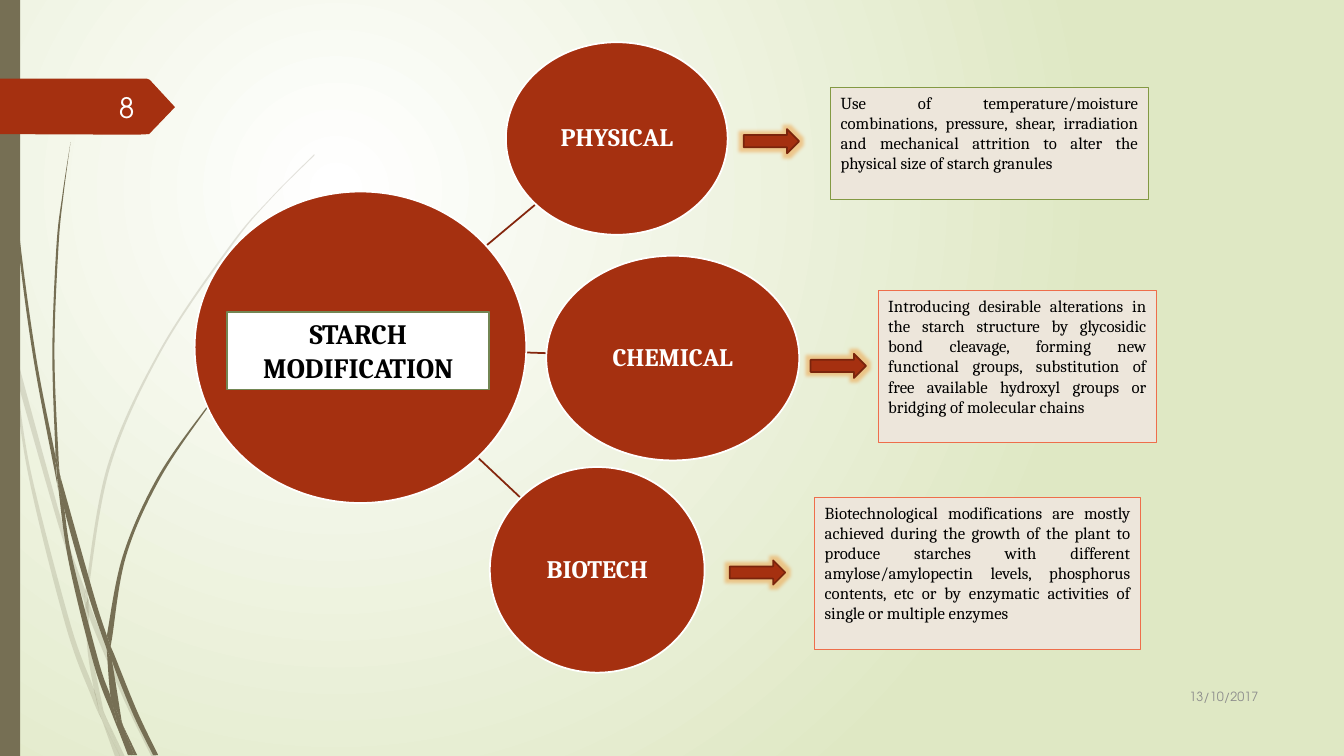
from dataclasses import dataclass

from lxml.etree import SubElement
from pptx import Presentation
from pptx.dml.color import RGBColor
from pptx.enum.shapes import MSO_CONNECTOR, MSO_SHAPE
from pptx.enum.text import MSO_ANCHOR, PP_ALIGN
from pptx.oxml.ns import qn
from pptx.util import Pt


@dataclass(frozen=True)
class Theme:
    paper: str = "FFFFFF"
    paper_edge: str = "DFE8C4"
    grass: str = "766F54"
    rust: str = "A53010"
    rust_line: str = "84260D"
    arrow_line: str = "7A240C"
    glow: str = "F0932B"
    note: str = "EDE6DB"
    green_line: str = "839943"
    coral_line: str = "EE6E4B"
    label_line: str = "728653"
    ink: str = "000000"
    date: str = "8C8C8C"
    serif: str = "Cambria"
    sans: str = "TeX Gyre Adventor"
    hub_size: int = 20
    branch_size: int = 18
    note_size: int = 12
    date_size: int = 9


THEME = Theme()
SLIDE_BOX = (0, 0, 960, 540)
DIAGRAM_BOX = (139, 30, 687, 451)

# Grass pieces: the two smooth sides of each outline
FAINT_GRASS = [
    ([(8, 252), (6.5, 232), (0, 203)], [(0, 215), (7, 248)]),
    ([(12, 271), (42, 376), (60.5, 431)], [(61, 422), (44.6, 374), (10, 248)]),
    ([(63, 429), (63, 439), (88.6, 500), (108, 540)], [(111.6, 540), (91.4, 498), (66, 437)]),
    ([(75.6, 512), (85.7, 540)], [(89, 540)]),
    ([(8, 252), (20, 338), (47, 447), (66, 499), (72.7, 514)],
     [(71, 509), (67, 492), (50.4, 446), (22.3, 338), (12, 271)]),
    ([(60.5, 431), (62.6, 465), (67, 492), (69, 498), (75.6, 512)],
     [(74, 508), (65.5, 465), (63.4, 439), (63.4, 438)]),
    ([(61.2, 422), (61.2, 420), (77, 332), (113.8, 250.6), (164, 175.7), (193, 141.8), (224.6, 110)],
     [(224.6, 111), (193, 142.6), (165, 176.4), (115, 251.3), (79, 332.6), (63.4, 420), (63.4, 429)]),
    ([(72.7, 514), (82, 540)], [(85.7, 540)]),
    ([(63.4, 438), (63.4, 439), (63.4, 429)], [(61.2, 422), (60.5, 431)]),
    ([(67, 492), (71, 509), (72.7, 514), (85.7, 540)], [(75.6, 512), (69, 498)]),
]
DARK_GRASS = [
    ([(2.2, 0), (2.9, 34.6), (5, 79), (12.2, 168), (23.8, 255.6), (40.3, 343), (41, 346)],
     [(39.6, 329), (39.6, 326), (25.9, 255.6), (13.7, 167), (5.8, 78.5), (3.6, 34.6), (2.9, 0)]),
    ([(43, 340), (46, 364), (63.4, 426), (76.3, 464)], [(76.3, 454), (67, 425), (43, 340)]),
    ([(79, 461.5), (80, 472), (95, 510), (109.4, 539.3)], [(113, 539.3), (98, 508), (81.4, 467)]),
    ([(41, 343), (49, 401), (67, 474.5), (80, 510), (84, 520)],
     [(83.5, 516), (79, 497.5), (70.6, 473), (51.8, 400), (46, 364)]),
    ([(43, 340), (41.8, 326), (38.9, 251), (41.8, 176), (45.4, 139), (50.4, 101.5)],
     [(50.4, 101.5), (44.6, 139), (40.3, 176), (37.4, 251), (39.6, 323)]),
    ([(87.8, 518), (95.8, 539.3)], [(98, 539.3)]),
    ([(41, 343), (46, 364), (43, 340)], [(39.6, 323), (39.6, 326)]),
    ([(76.3, 454), (87.8, 396.7), (112.3, 341.3), (147, 291.6), (166.3, 268.6), (187.2, 247.7)],
     [(188, 247.7), (166.3, 269.3), (147.6, 292.3), (113.8, 342.7), (90, 397.4), (80, 456), (79, 461.5)]),
    ([(84, 520), (91.4, 539.3)], [(94.3, 539.3)]),
    ([(76.3, 464), (79, 497.5), (83.5, 508), (87.8, 518)], [(87, 515.5), (80, 472), (78.5, 469)]),
    ([(76.3, 464), (78.5, 469), (80, 472)], [(79, 461.5), (76.3, 454)]),
    ([(79, 497.5), (83.5, 516), (84, 520), (93.6, 539.3)], [(95.8, 539.3), (87.8, 518), (83.5, 508)]),
]
PAGE_TAG = [(125, 76.5), (106.5, 95.8), (98, 96.2), (0, 95.8), (0, 56.2), (105, 56.2), (107, 57)]

# Branches: positions are relative to the diagram box
BRANCHES = [
    dict(name="PHYSICAL", circle=(222.4, 0.2, 158.4, 137.5), arrow=(392.2, 62.2),
         note=(454.3, 32.6, 226.8, 79.9), link=(208.9, 145, 243.1, 116.4), border=THEME.green_line,
         text="Use of temperature/moisture combinations, pressure, shear, irradiation "
              "and mechanical attrition to alter the physical size of starch granules"),
    dict(name="CHEMICAL", circle=(251.2, 152.7, 180.7, 146.2), arrow=(440, 222.7),
         note=(488.4, 177.6, 198.7, 108.7), link=(237, 221.8, 251.5, 222.3), border=THEME.coral_line,
         text="Introducing desirable alterations in the starch structure by glycosidic "
              "bond cleavage, forming new functional groups, substitution of free "
              "available hydroxyl groups or bridging of molecular chains"),
    dict(name="BIOTECH", circle=(210.9, 303.6, 153.4, 146.9), arrow=(382.3, 370.3),
         note=(443, 325.2, 232.6, 108.7), link=(203, 297.5, 232.5, 325.2), border=THEME.coral_line,
         text="Biotechnological modifications are mostly achieved during the growth of the plant "
              "to produce starches with different amylose/amylopectin levels, phosphorus contents, "
              "etc or by enzymatic activities of single or multiple enzymes"),
]


def color(value):
    return RGBColor.from_string(value)


def inside(box, part):
    """Move a part, given relative to a box, to slide coordinates."""
    return (box[0] + part[0], box[1] + part[1], *part[2:])


def paint(shape, fill, line=None, width=1.25):
    shape.shadow.inherit = False
    shape.fill.solid()
    shape.fill.fore_color.rgb = color(fill)
    if line:
        shape.line.color.rgb = color(line)
        shape.line.width = Pt(width)
    else:
        shape.line.fill.background()


def add_block(slide, kind, box, fill, line=None, width=1.25):
    shape = slide.shapes.add_shape(kind, *map(Pt, box))
    paint(shape, fill, line, width)
    return shape


def write(shape, text, size, ink, align=PP_ALIGN.CENTER, font=THEME.serif, bold=False, **settings):
    for name, value in {"word_wrap": True, "vertical_anchor": MSO_ANCHOR.MIDDLE, **settings}.items():
        setattr(shape.text_frame, name, value)
    paragraph = shape.text_frame.paragraphs[0]
    paragraph.alignment = align
    run = paragraph.add_run()
    run.text = text
    for name, value in {"name": font, "size": Pt(size), "bold": bold}.items():
        setattr(run.font, name, value)
    run.font.color.rgb = color(ink)


def add_outline(slide, box, points, fill):
    corners = [tuple(map(Pt, inside(box, point))) for point in points]
    builder = slide.shapes.build_freeform(*corners[0])
    builder.add_line_segments(corners[1:], close=True)
    shape = builder.convert_to_shape()
    paint(shape, fill)
    return shape


def bend(side):
    """Bezier control points of a smooth curve through the side's points."""
    padded = [side[0], *side, side[-1]]
    for a, b, c, d in zip(padded, padded[1:], padded[2:], padded[3:]):
        yield tuple(q + (r - p) / 6 for p, q, r in zip(a, b, c))
        yield tuple(r - (s - q) / 6 for q, r, s in zip(b, c, d))
        yield c


def add_grass(slide, box, sides, opacity):
    first, second = sides
    points = [first[0], *bend(first), *bend([first[-1], second[0]]), *bend(second)]
    grass = add_outline(slide, box, points, THEME.grass)
    # Turn each three straight segments into one curve
    segments = list(grass.element.iter(qn("a:lnTo")))
    for start in range(0, len(segments), 3):
        contour = segments[start].getparent()
        curve = SubElement(contour, qn("a:cubicBezTo"))
        contour.insert(contour.index(segments[start]), curve)
        for segment in segments[start:start + 3]:
            curve.append(segment[0])
            contour.remove(segment)
    if opacity < 100:
        tint = grass.element.spPr.find(qn("a:solidFill"))[0]
        SubElement(tint, qn("a:alpha"), val=str(opacity * 1000))


def add_backdrop(slide, box):
    # Radial background
    fill = slide.background.fill
    fill.gradient()
    for stop, shade, position in zip(fill.gradient_stops, (THEME.paper, THEME.paper_edge), (0, 1)):
        stop.color.rgb = color(shade)
        stop.position = position
    gradient = slide.element.find(".//" + qn("a:gradFill"))
    gradient.remove(gradient.find(qn("a:lin")))
    radial = SubElement(gradient, qn("a:path"), path="circle")
    SubElement(radial, qn("a:fillToRect"), l="50000", t="50000", r="100000", b="100000")
    # Grass, side bar and page tag
    for pieces, opacity in ((FAINT_GRASS, 20), (DARK_GRASS, 100)):
        for sides in pieces:
            add_grass(slide, box, sides, opacity)
    add_block(slide, MSO_SHAPE.RECTANGLE, inside(box, (0, 0, 14.4, box[3])), THEME.grass)
    add_outline(slide, box, PAGE_TAG, THEME.rust)


def add_branch(slide, box, branch):
    note = add_block(slide, MSO_SHAPE.RECTANGLE, inside(box, branch["note"]), THEME.note, branch["border"], 0.75)
    write(note, branch["text"], THEME.note_size, THEME.ink, PP_ALIGN.JUSTIFY, vertical_anchor=MSO_ANCHOR.TOP)
    # Circle, with its name in the inscribed rectangle
    left, top, width, height = inside(box, branch["circle"])
    add_block(slide, MSO_SHAPE.OVAL, (left, top, width, height), THEME.rust, THEME.paper)
    inner = (left + 0.146 * width, top + 0.146 * height, 0.708 * width, 0.708 * height)
    name = slide.shapes.add_textbox(*map(Pt, inner))
    margins = dict.fromkeys(("margin_left", "margin_right", "margin_top", "margin_bottom"), Pt(1))
    write(name, branch["name"], THEME.branch_size, THEME.paper, bold=True, **margins)
    name.text_frame.paragraphs[0].line_spacing = 0.9
    # Glowing arrow
    arrow = add_block(slide, MSO_SHAPE.RIGHT_ARROW, inside(box, (*branch["arrow"], 39.6, 17.3)),
                      THEME.rust, THEME.arrow_line)
    glow = SubElement(arrow.element.spPr.find(qn("a:effectLst")), qn("a:glow"), rad=str(Pt(5)))
    SubElement(SubElement(glow, qn("a:srgbClr"), val=THEME.glow), qn("a:alpha"), val="45000")


def add_diagram(slide, box):
    # Links from hub to branches
    for branch in BRANCHES:
        ends = inside(box, branch["link"][:2]) + inside(box, branch["link"][2:])
        link = slide.shapes.add_connector(MSO_CONNECTOR.STRAIGHT, *map(Pt, ends))
        link.line.color.rgb = color(THEME.rust_line)
        link.line.width = Pt(1.25)
        SubElement(link.element.spPr, qn("a:effectLst"))
    # Hub and its label
    add_block(slide, MSO_SHAPE.OVAL, inside(box, (0, 106.8, 236.9, 222.5)), THEME.rust, THEME.paper)
    label = add_block(slide, MSO_SHAPE.RECTANGLE, inside(box, (23.4, 192.6, 187.2, 55.7)),
                      THEME.paper, THEME.label_line)
    write(label, "STARCH MODIFICATION", THEME.hub_size, THEME.ink, bold=True, vertical_anchor=MSO_ANCHOR.TOP)
    for branch in BRANCHES:
        add_branch(slide, box, branch)


def add_footer(slide, box):
    for text, part, size, ink in (("13/10/2017", (815.8, 482.4, 90, 29.5), THEME.date_size, THEME.date),
                                  ("8", (41.8, 61.9, 61.2, 28.8), THEME.hub_size, THEME.paper)):
        field = slide.shapes.add_textbox(*map(Pt, inside(box, part)))
        write(field, text, size, ink, PP_ALIGN.RIGHT, THEME.sans)


def main():
    presentation = Presentation()
    presentation.slide_width, presentation.slide_height = map(Pt, SLIDE_BOX[2:])
    slide = presentation.slides.add_slide(presentation.slide_layouts[6])
    add_backdrop(slide, SLIDE_BOX)
    add_diagram(slide, DIAGRAM_BOX)
    add_footer(slide, SLIDE_BOX)
    presentation.save("out.pptx")


if __name__ == "__main__":
    main()
